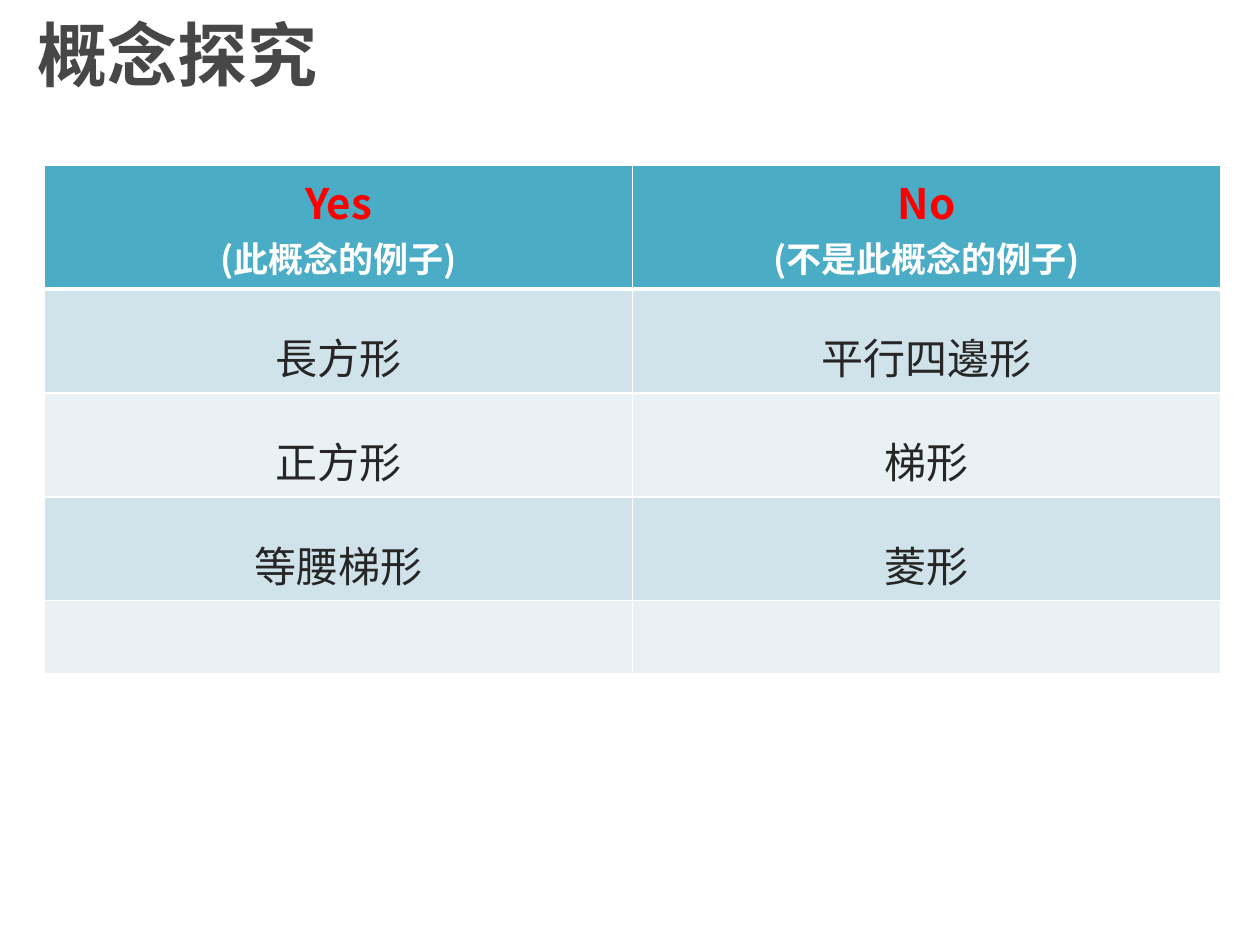
from lxml import etree
from pptx import Presentation
from pptx.dml.color import RGBColor
from pptx.enum.text import MSO_ANCHOR, PP_ALIGN
from pptx.oxml.ns import qn
from pptx.util import Pt

MIDDLE = MSO_ANCHOR.MIDDLE
CENTER = PP_ALIGN.CENTER
FONT = "Noto Sans CJK SC"
TITLE_GRAY = RGBColor(0x47, 0x47, 0x47)
RED = RGBColor(0xFF, 0x00, 0x00)
WHITE = RGBColor(0xFF, 0xFF, 0xFF)
TEXT_DARK = RGBColor(0x26, 0x26, 0x26)
HEADER_FILL = RGBColor(0x4B, 0xAC, 0xC6)
BAND_FILLS = (RGBColor(0xD0, 0xE3, 0xEA), RGBColor(0xE9, 0xF1, 0xF5))

TITLE = "概念探究"
HEADERS = [("Yes", "(此概念的例子)"), ("No", "(不是此概念的例子)")]
EXAMPLES = [
    ("長方形", "平行四邊形"),
    ("正方形", "梯形"),
    ("等腰梯形", "菱形"),
    ("", ""),
]
COLUMN_WIDTH = 336
ROW_HEIGHTS = [70.6, 59.4, 59.4, 59.4, 41.6]


def write(paragraph, text, size, color, bold=False):
    paragraph.text = text
    font = paragraph.font
    font.size = Pt(size)
    font.bold = bold
    font.color.rgb = color
    font.name = FONT
    for run in paragraph.runs:
        properties = run._r.get_or_add_rPr()
        etree.SubElement(properties, qn("a:ea"), typeface=FONT)


def style_cell(cell, fill, top_width, bottom_width):
    properties = cell._tc.get_or_add_tcPr()
    widths = {"a:lnL": 1, "a:lnR": 1, "a:lnT": top_width, "a:lnB": bottom_width}
    for tag, width in widths.items():
        line = etree.SubElement(properties, qn(tag), w=str(Pt(width)))
        solid = etree.SubElement(line, qn("a:solidFill"))
        etree.SubElement(solid, qn("a:srgbClr"), val=str(WHITE))
    cell.fill.solid()
    cell.fill.fore_color.rgb = fill


def add_title(slide):
    box = slide.shapes.add_textbox(Pt(14.4), Pt(3.6), Pt(661.7), Pt(54))
    frame = box.text_frame
    frame.word_wrap = True
    frame.vertical_anchor = MIDDLE
    write(frame.paragraphs[0], TITLE, 40, TITLE_GRAY, bold=True)


def add_concept_table(slide):
    table = slide.shapes.add_table(
        len(ROW_HEIGHTS), len(HEADERS), Pt(25.5), Pt(94.5),
        Pt(COLUMN_WIDTH * len(HEADERS)), Pt(sum(ROW_HEIGHTS)),
    ).table
    for row, height in zip(table.rows, ROW_HEIGHTS):
        row.height = Pt(height)

    for column, (heading, note) in enumerate(HEADERS):
        cell = table.cell(0, column)
        style_cell(cell, HEADER_FILL, 1, 3)
        cell.margin_top = Pt(3.2)
        frame = cell.text_frame
        heading_paragraph = frame.paragraphs[0]
        note_paragraph = frame.add_paragraph()
        write(heading_paragraph, heading, 24, RED, bold=True)
        write(note_paragraph, note, 20, WHITE, bold=True)
        for paragraph in frame.paragraphs:
            paragraph.alignment = CENTER

    for index, examples in enumerate(EXAMPLES):
        for column, example in enumerate(examples):
            cell = table.cell(index + 1, column)
            style_cell(cell, BAND_FILLS[index % 2], 3 if index == 0 else 1, 1)
            if example:
                paragraph = cell.text_frame.paragraphs[0]
                paragraph.alignment = CENTER
                paragraph.line_spacing = 1.5
                write(paragraph, example, 24, TEXT_DARK)


def main():
    presentation = Presentation()
    presentation.slide_width = Pt(720)
    presentation.slide_height = Pt(540)
    slide = presentation.slides.add_slide(presentation.slide_layouts[6])
    add_title(slide)
    add_concept_table(slide)
    presentation.save("out.pptx")


if __name__ == "__main__":
    main()
